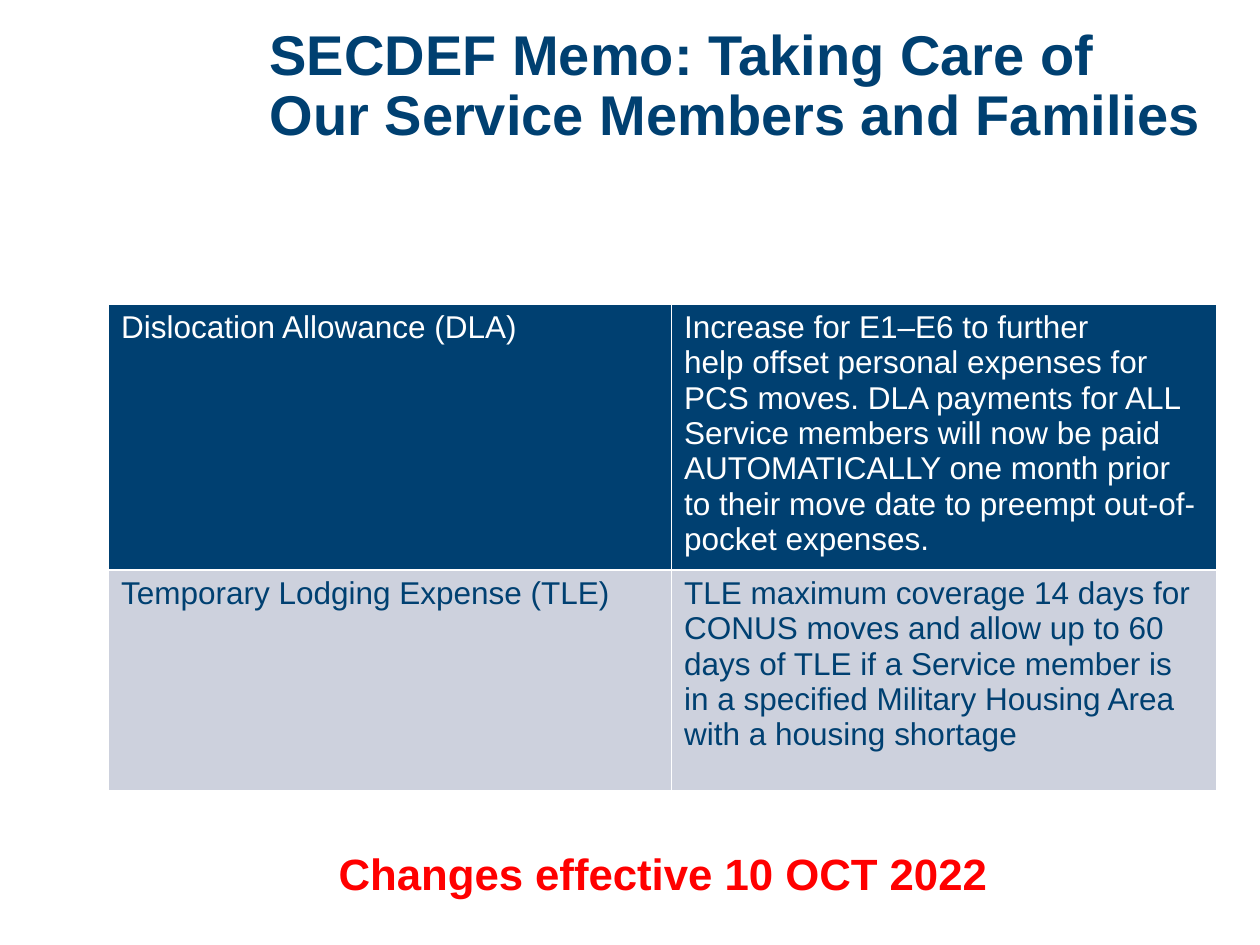
from dataclasses import dataclass

from lxml.etree import SubElement
from pptx import Presentation
from pptx.dml.color import RGBColor as RGB
from pptx.enum.text import MSO_ANCHOR as Anchor, MSO_AUTO_SIZE as AutoSize, PP_ALIGN as Align
from pptx.oxml.ns import qn
from pptx.slide import Slide
from pptx.table import _Cell as Cell
from pptx.util import Pt


@dataclass(frozen=True)
class Theme:
    font: str = "Arial"
    navy: RGB = RGB(0x00, 0x40, 0x71)
    white: RGB = RGB(0xFF, 0xFF, 0xFF)
    grey: RGB = RGB(0xCD, 0xD1, 0xDD)
    red: RGB = RGB(0xFF, 0x00, 0x00)
    title: int = 32
    body: int = 18
    notice: int = 25
    border: int = 1


@dataclass(frozen=True)
class Box:
    left: float
    top: float
    width: float
    height: float


@dataclass(frozen=True)
class Allowance:
    name: str
    change: str
    height: float
    fill: RGB
    color: RGB


T = Theme()
TITLE = Box(146.9, -2.2, 565.9, 104.4)
NOTICE = Box(164.9, 480.2, 427.7, 37.4)
TABLE_LEFT, TABLE_TOP = 62, 173.6
COLUMNS = (321.8, 311.8)
ALLOWANCES = (
    Allowance(
        "Dislocation Allowance (DLA)",
        "Increase for E1–E6 to further\n"
        "help offset personal expenses for PCS moves. DLA payments for ALL "
        "Service members will now be paid AUTOMATICALLY one month prior to "
        "their move date to preempt out-of-pocket expenses.",
        152, T.navy, T.white,
    ),
    Allowance(
        "Temporary Lodging Expense (TLE)",
        "TLE maximum coverage 14 days for CONUS moves and allow up to 60 days "
        "of TLE if a Service member is in a specified Military Housing Area "
        "with a housing shortage",
        126.5, T.grey, T.navy,
    ),
)


def write(tf, text: str, size: int, color: RGB, bold: bool, align: Align) -> None:
    tf.text = text
    for p in tf.paragraphs:
        p.alignment = align
        p.font.name = T.font
        p.font.size = Pt(size)
        p.font.bold = bold
        p.font.color.rgb = color


def place(sp, box: Box) -> None:
    sp.left, sp.top = Pt(box.left), Pt(box.top)
    sp.width, sp.height = Pt(box.width), Pt(box.height)


def add_title(s: Slide) -> None:
    sp = s.shapes.title
    place(sp, TITLE)
    tf = sp.text_frame
    tf.word_wrap = True
    tf.auto_size = AutoSize.NONE
    tf.vertical_anchor = Anchor.MIDDLE
    write(tf, "SECDEF Memo: Taking Care of \vOur Service Members and Families",
          T.title, T.navy, True, Align.LEFT)
    tf.paragraphs[0].line_spacing = 0.9


def set_borders(cell: Cell) -> None:
    props = cell._tc.get_or_add_tcPr()
    for i, side in enumerate(("a:lnL", "a:lnR", "a:lnT", "a:lnB")):
        line = SubElement(props, qn(side), w=str(Pt(T.border)))
        fill = SubElement(line, qn("a:solidFill"))
        SubElement(fill, qn("a:srgbClr"), val=str(T.white))
        props.remove(line)
        props.insert(i, line)


def add_allowances(s: Slide) -> None:
    height = sum(a.height for a in ALLOWANCES)
    table = s.shapes.add_table(
        len(ALLOWANCES), len(COLUMNS), Pt(TABLE_LEFT), Pt(TABLE_TOP),
        Pt(sum(COLUMNS)), Pt(height),
    ).table
    table.first_row = table.horz_banding = False
    for column, width in zip(table.columns, COLUMNS):
        column.width = Pt(width)
    for row, a in zip(table.rows, ALLOWANCES):
        row.height = Pt(a.height)
        for cell, text in zip(row.cells, (a.name, a.change)):
            cell.fill.solid()
            cell.fill.fore_color.rgb = a.fill
            set_borders(cell)
            write(cell.text_frame, text, T.body, a.color, False, Align.LEFT)


def add_notice(s: Slide) -> None:
    sp = s.shapes.add_textbox(0, 0, 0, 0)
    place(sp, NOTICE)
    tf = sp.text_frame
    tf.word_wrap = True
    tf.auto_size = AutoSize.SHAPE_TO_FIT_TEXT
    write(tf, "Changes effective 10 OCT 2022", T.notice, T.red, True, Align.CENTER)


def main() -> None:
    prs = Presentation()
    prs.slide_width, prs.slide_height = Pt(720), Pt(540)
    s = prs.slides.add_slide(prs.slide_layouts[5])
    add_title(s)
    add_allowances(s)
    add_notice(s)
    prs.save("out.pptx")


if __name__ == "__main__":
    main()
